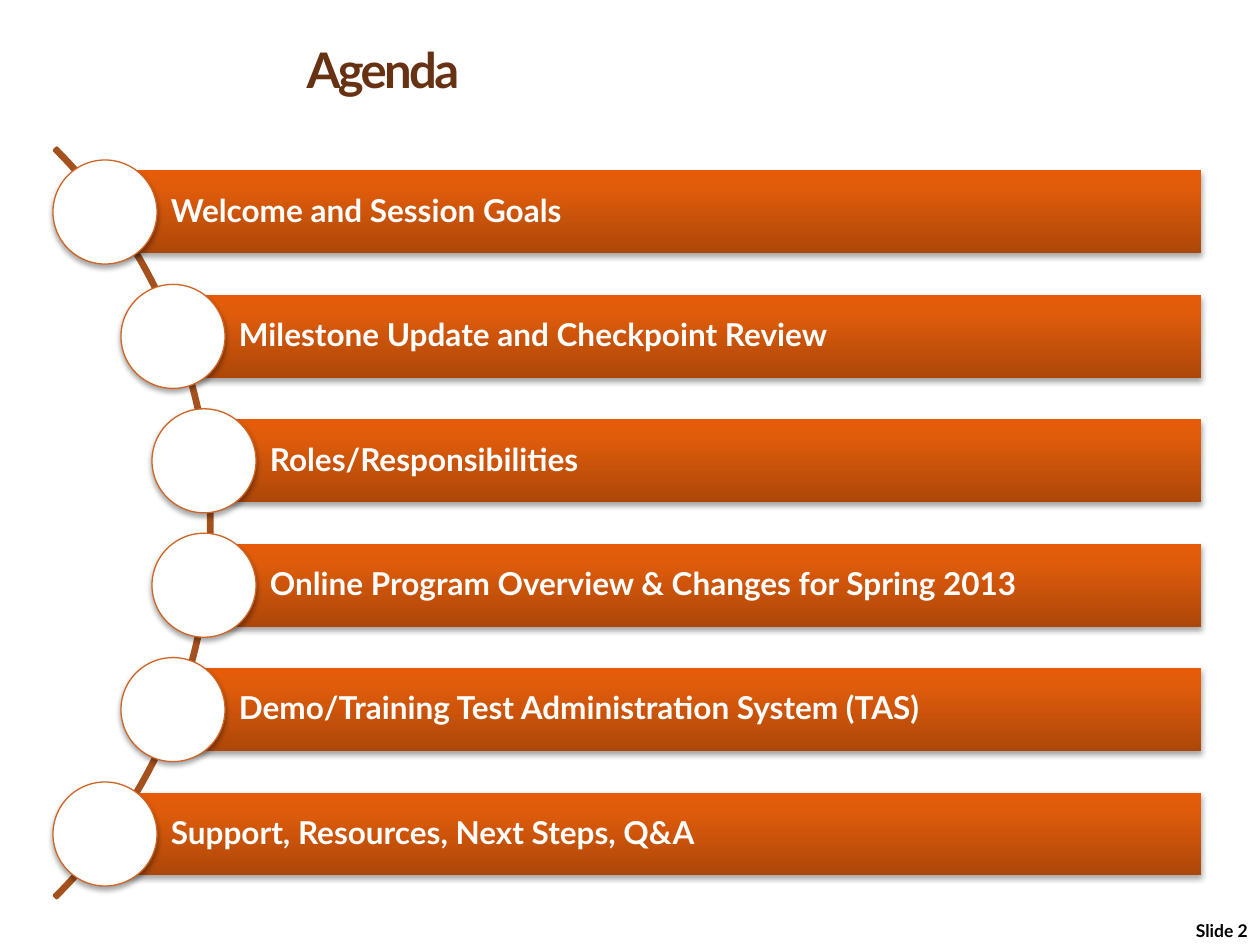
import pptx
import pptx.dml.color
import pptx.enum.shapes
import pptx.enum.text
import pptx.util
import copy
import lxml.etree
from pptx.oxml.ns import qn

RGBColor = pptx.dml.color.RGBColor
Shapes = pptx.enum.shapes.MSO_SHAPE
Anchor = pptx.enum.text.MSO_ANCHOR
Align = pptx.enum.text.PP_ALIGN
Pt = pptx.util.Pt

BROWN = RGBColor(0x67, 0x32, 0x13)
ARC_COLOR = RGBColor(0xA5, 0x51, 0x1E)
RING_COLOR = RGBColor(0xCE, 0x65, 0x25)
WHITE = RGBColor(0xFF, 0xFF, 0xFF)
BLACK = RGBColor(0, 0, 0)
BAR_STOPS = [
    (0, RGBColor(0xAD, 0x47, 0x09)),
    (0.8, RGBColor(0xE0, 0x5C, 0x0B)),
    (1, RGBColor(0xE5, 0x5B, 0x07)),
]
FONT = "Lato"
EMU_PER_PX = 914400 / 126

ARC_CENTER_X, ARC_CENTER_Y, ARC_RADIUS = -318, 523, 530
ROW_PITCH = 124.4
CIRCLE_SIZE, BAR_HEIGHT, BAR_RIGHT = 104, 83, 1201
AGENDA = [
    (105, "Welcome and Session Goals"),
    (173, "Milestone Update and Checkpoint Review"),
    (204, "Roles/Responsibilities"),
    (204, "Online Program Overview & Changes for Spring 2013"),
    (173, "Demo/Training Test Administration System (TAS)"),
    (105, "Support, Resources, Next Steps, Q&A"),
]


def px(length):
    return pptx.util.Emu(round(length * EMU_PER_PX))


def box(left, top, width, height):
    return px(left), px(top), px(width), px(height)


def write(paragraph, text, size, color):
    run = paragraph.add_run()
    run.text = text
    run.font.name = FONT
    run.font.size = Pt(size)
    run.font.bold = True
    run.font.color.rgb = color
    return run


def add_shadow(shape):
    effects = shape.element.spPr.find(qn("a:effectLst"))
    shadow = lxml.etree.SubElement(
        effects, qn("a:outerShdw"), blurRad=str(Pt(3.1)), dist=str(Pt(1.8)),
        dir="5400000", rotWithShape="0")
    color = lxml.etree.SubElement(shadow, qn("a:srgbClr"), val=str(BLACK))
    lxml.etree.SubElement(color, qn("a:alpha"), val="35000")


def fill_gradient(shape):
    shape.fill.gradient()
    shape.fill.gradient_angle = 90
    stop_list = shape.element.spPr.find(".//" + qn("a:gsLst"))
    stop_list.append(copy.deepcopy(stop_list[-1]))
    for stop, (position, color) in zip(shape.fill.gradient_stops, BAR_STOPS):
        stop.position = position
        stop.color.rgb = color


def add_title(slide, text):
    title = slide.shapes.title
    title.left, title.top, title.width, title.height = box(294, 0, 966, 105)
    title.text_frame.vertical_anchor = Anchor.BOTTOM
    paragraph = title.text_frame.paragraphs[0]
    paragraph.alignment = Align.LEFT
    run = write(paragraph, text, 28, BROWN)
    run.font._element.set("spc", "-150")


def add_arc(slide):
    arc = slide.shapes.add_shape(Shapes.BLOCK_ARC, *box(
        ARC_CENTER_X - ARC_RADIUS, ARC_CENTER_Y - ARC_RADIUS,
        2 * ARC_RADIUS, 2 * ARC_RADIUS))
    arc.shadow.inherit = False
    for index, value in enumerate((189, 27, 0.003)):
        arc.adjustments[index] = value
    arc.fill.background()
    arc.line.color.rgb = ARC_COLOR
    arc.line.width = Pt(2)


def add_bar(slide, left, middle, text):
    bar = slide.shapes.add_shape(Shapes.RECTANGLE, *box(
        left, middle - BAR_HEIGHT / 2, BAR_RIGHT - left, BAR_HEIGHT))
    bar.shadow.inherit = False
    fill_gradient(bar)
    bar.line.fill.background()
    add_shadow(bar)
    frame = bar.text_frame
    frame.word_wrap = True
    frame.vertical_anchor = Anchor.MIDDLE
    frame.margin_left = px(66)
    frame.margin_top = frame.margin_right = frame.margin_bottom = px(6)
    paragraph = frame.paragraphs[0]
    paragraph.alignment = Align.LEFT
    paragraph.line_spacing = 0.9
    write(paragraph, text, 18, WHITE)


def add_circle(slide, center, middle):
    circle = slide.shapes.add_shape(Shapes.OVAL, *box(
        center - CIRCLE_SIZE / 2, middle - CIRCLE_SIZE / 2, CIRCLE_SIZE, CIRCLE_SIZE))
    circle.shadow.inherit = False
    circle.fill.solid()
    circle.fill.fore_color.rgb = WHITE
    circle.line.color.rgb = RING_COLOR
    circle.line.width = Pt(0.75)
    add_shadow(circle)


def add_slide_number(slide, text):
    frame = slide.shapes.add_textbox(*box(1166, 914, 94, 31)).text_frame
    frame.word_wrap = True
    paragraph = frame.paragraphs[0]
    paragraph.alignment = Align.RIGHT
    write(paragraph, text, 10, BLACK)


def main():
    presentation = pptx.Presentation()
    presentation.slide_width, presentation.slide_height = px(1260), px(945)
    slide = presentation.slides.add_slide(presentation.slide_layouts[5])
    add_title(slide, "Agenda")
    add_arc(slide)
    first_middle = ARC_CENTER_Y - ROW_PITCH * (len(AGENDA) - 1) / 2
    for index, (center, text) in enumerate(AGENDA):
        middle = first_middle + index * ROW_PITCH
        add_bar(slide, center, middle, text)
        add_circle(slide, center, middle)
    add_slide_number(slide, "Slide 2")
    presentation.save("out.pptx")


if __name__ == "__main__":
    main()
